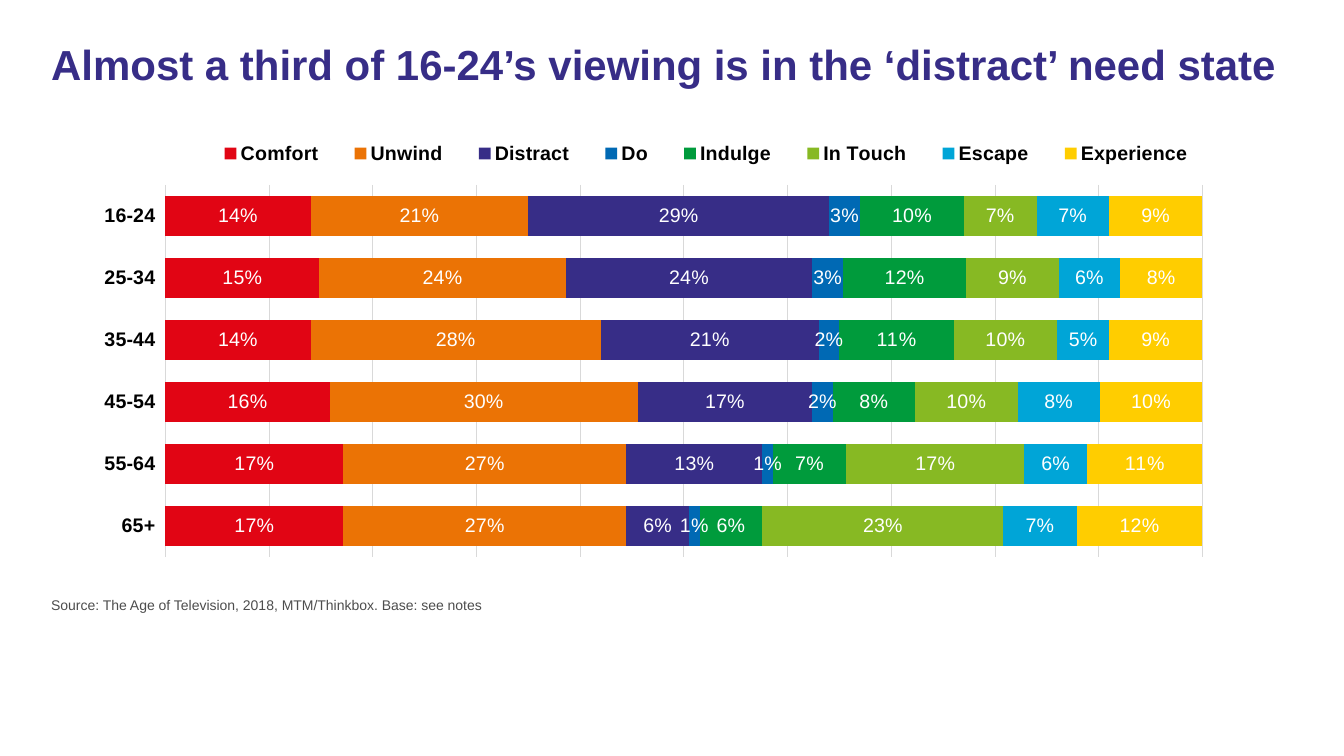
from lxml.etree import SubElement
from pptx import Presentation
from pptx.chart.data import CategoryChartData
from pptx.dml.color import RGBColor
from pptx.enum.chart import XL_CHART_TYPE, XL_LEGEND_POSITION, XL_TICK_LABEL_POSITION, XL_TICK_MARK
from pptx.oxml import parse_xml
from pptx.oxml.ns import nsdecls, qn
from pptx.util import Cm, Pt

BLACK = RGBColor(0x00, 0x00, 0x00)
WHITE = RGBColor(0xFF, 0xFF, 0xFF)
GREY = RGBColor(0x4D, 0x4D, 0x4D)
GRID = RGBColor(0xD9, 0xD9, 0xD9)
RED = RGBColor(0xE1, 0x05, 0x14)
ORANGE = RGBColor(0xEB, 0x73, 0x05)
PURPLE = RGBColor(0x37, 0x2D, 0x87)
BLUE = RGBColor(0x00, 0x69, 0xB4)
GREEN = RGBColor(0x00, 0x9B, 0x3C)
LIME = RGBColor(0x87, 0xB9, 0x23)
SKY = RGBColor(0x00, 0xA5, 0xD7)
YELLOW = RGBColor(0xFF, 0xCD, 0x00)

AGE_GROUPS = ["65+", "55-64", "45-54", "35-44", "25-34", "16-24"]
NEED_STATES = [
    ("Comfort", RED, [0.17, 0.17, 0.16, 0.14, 0.15, 0.14]),
    ("Unwind", ORANGE, [0.27, 0.27, 0.3, 0.28, 0.24, 0.21]),
    ("Distract", PURPLE, [0.06, 0.13, 0.17, 0.21, 0.24, 0.29]),
    ("Do", BLUE, [0.01, 0.01, 0.02, 0.02, 0.03, 0.03]),
    ("Indulge", GREEN, [0.06, 0.07, 0.08, 0.11, 0.12, 0.1]),
    ("In Touch", LIME, [0.23, 0.17, 0.1, 0.1, 0.09, 0.07]),
    ("Escape", SKY, [0.07, 0.06, 0.08, 0.05, 0.06, 0.07]),
    ("Experience", YELLOW, [0.12, 0.11, 0.1, 0.09, 0.08, 0.09]),
]

TITLE_FONT = {"name": "Arial", "size": Pt(30), "bold": True}
SOURCE_FONT = {"name": "Arial", "size": Pt(10), "bold": False}
KEY_FONT = {"name": "Arial", "size": Pt(14), "bold": True}
LABEL_FONT = {"name": "Arial", "size": Pt(14), "bold": False}


def set_attributes(target, values):
    """Set every attribute named in a dict of format values."""
    for name, value in values.items():
        setattr(target, name, value)


def format_font(font, values, color):
    """Apply font values and a colour."""
    set_attributes(font, values)
    font.color.rgb = color


def format_line(line):
    """Give a chart line the thin light grey style."""
    line.color.rgb = GRID
    line.width = Pt(0.75)


def add_text(slide, box, text, font_values, color, line_spacing=1.0):
    """Add a wrapped single-paragraph text box."""
    text_frame = slide.shapes.add_textbox(*box).text_frame
    text_frame.word_wrap = True
    paragraph = text_frame.paragraphs[0]
    paragraph.text = text
    paragraph.line_spacing = line_spacing
    format_font(paragraph.font, font_values, color)


def set_layout(parent, index, bounds, inner=False):
    """Place a chart part by fractions of the chart area."""
    for old_layout in parent.findall(qn("c:layout")):
        parent.remove(old_layout)
    layout = parse_xml(f"<c:layout {nsdecls('c')}><c:manualLayout/></c:layout>")
    settings = [("layoutTarget", "inner")] if inner else []
    settings += [("xMode", "edge"), ("yMode", "edge"), *zip("xywh", bounds)]
    for tag, value in settings:
        SubElement(layout[0], qn(f"c:{tag}")).set("val", str(value))
    parent.insert(index, layout)


def format_series(series, color):
    """Fill a series and show its values as white percentages."""
    series.format.fill.solid()
    series.format.fill.fore_color.rgb = color
    labels = series.data_labels
    set_attributes(labels, {"show_value": True, "number_format": "0%",
                            "number_format_is_linked": False})
    format_font(labels.font, LABEL_FONT, WHITE)


def format_axes(chart):
    """Style the age axis and keep only the grid of the value axis."""
    age_axis = chart.category_axis
    set_attributes(age_axis, {"major_tick_mark": XL_TICK_MARK.NONE,
                              "minor_tick_mark": XL_TICK_MARK.NONE,
                              "tick_label_position": XL_TICK_LABEL_POSITION.LOW})
    format_font(age_axis.tick_labels.font, KEY_FONT, BLACK)
    format_line(age_axis.format.line)
    share_axis = chart.value_axis
    set_attributes(share_axis, {"visible": False, "minimum_scale": 0, "maximum_scale": 1,
                                "major_unit": 0.1, "has_major_gridlines": True})
    format_line(share_axis.major_gridlines.format.line)


def add_need_state_chart(slide, box):
    """Add the stacked bars of need states by age group."""
    data = CategoryChartData(number_format="0%")
    data.categories = AGE_GROUPS
    for name, _, values in NEED_STATES:
        data.add_series(name, values)
    chart = slide.shapes.add_chart(XL_CHART_TYPE.BAR_STACKED_100, *box, data).chart
    set_attributes(chart, {"has_title": False, "has_legend": True})
    format_font(chart.font, SOURCE_FONT, BLACK)
    plot = chart.plots[0]
    set_attributes(plot, {"gap_width": 53, "overlap": 100, "vary_by_categories": False})
    for series, (_, color, _) in zip(plot.series, NEED_STATES):
        format_series(series, color)
    format_axes(chart)
    legend = chart.legend
    set_attributes(legend, {"position": XL_LEGEND_POSITION.BOTTOM, "include_in_layout": False})
    format_font(legend.font, KEY_FONT, BLACK)
    set_layout(legend._element, 1, (0.11, 0.04, 0.83, 0.09))
    set_layout(chart._chartSpace.chart.plotArea, 0, (0.086, 0.151, 0.842, 0.777), inner=True)


def main():
    """Build and save the slide."""
    presentation = Presentation()
    set_attributes(presentation, {"slide_width": Cm(33.87), "slide_height": Cm(19.05)})
    slide = presentation.slides.add_slide(presentation.slide_layouts[6])
    add_text(slide, (Cm(1.04), Cm(0.99), Cm(31.5), Cm(2.84)),
             "Almost a third of 16-24’s viewing is in the ‘distract’ need state",
             TITLE_FONT, PURPLE, 0.9)
    add_text(slide, (Cm(1.04), Cm(14.91), Cm(31.5), Cm(0.84)),
             "Source: The Age of Television, 2018, MTM/Thinkbox. Base: see notes",
             SOURCE_FONT, GREY)
    add_need_state_chart(slide, (Cm(1.5), Cm(2.84), Cm(31.04), Cm(12.07)))
    presentation.save("out.pptx")


if __name__ == "__main__":
    main()
